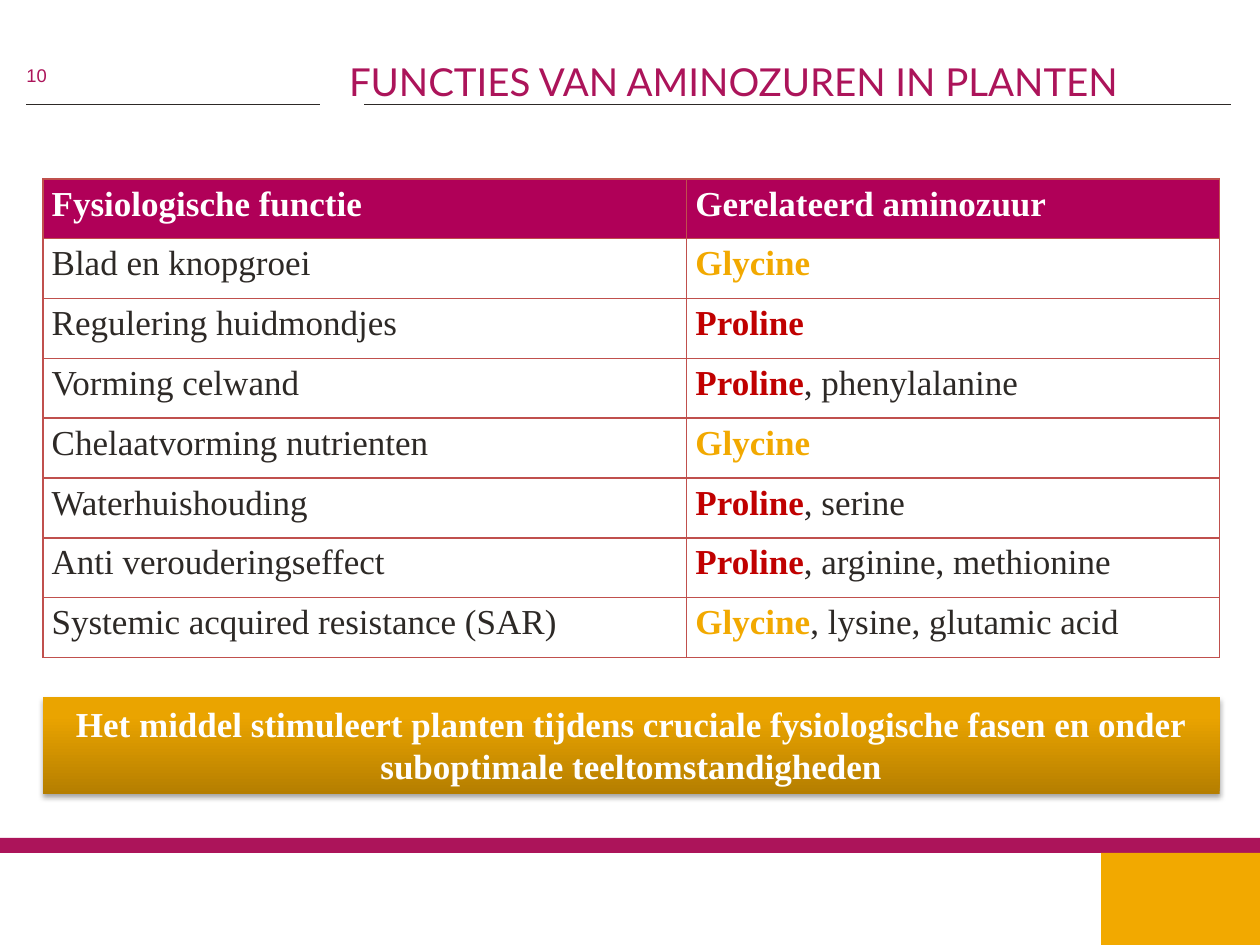
from dataclasses import dataclass

from lxml.etree import SubElement
from pptx import Presentation
from pptx.dml.color import RGBColor
from pptx.enum.shapes import MSO_CONNECTOR, MSO_SHAPE
from pptx.enum.text import MSO_ANCHOR, PP_ALIGN
from pptx.oxml import parse_xml
from pptx.oxml.ns import nsdecls, qn
from pptx.util import Inches, Pt


@dataclass(frozen=True)
class Theme:
    ink: str = "2D2926"
    magenta: str = "AC145A"
    header: str = "B00058"
    amber: str = "F2A900"
    red: str = "C00000"
    white: str = "FFFFFF"
    border: str = "C0504D"
    gradient: tuple = ((0, "B57E00"), (80, "EAA400"), (100, "ECA500"))
    title_font: str = "Lato"
    number_font: str = "Arial"
    body_font: str = "Times New Roman"
    title_size: float = 22
    number_size: float = 10.5
    body_size: float = 20


THEME = Theme()
ACCENTS = {"Glycine": THEME.amber, "Proline": THEME.red}
HEADINGS = ("Fysiologische functie", "Gerelateerd aminozuur")
FUNCTIONS = (
    ("Blad en knopgroei", "Glycine", ""),
    ("Regulering huidmondjes", "Proline", ""),
    ("Vorming celwand", "Proline", ", phenylalanine"),
    ("Chelaatvorming nutrienten", "Glycine", ""),
    ("Waterhuishouding", "Proline", ", serine"),
    ("Anti verouderingseffect", "Proline", ", arginine, methionine"),
    ("Systemic acquired resistance (SAR)", "Glycine", ", lysine, glutamic acid"),
)


def add_text(paragraph, text, font=THEME.body_font, size=THEME.body_size,
             color=THEME.ink, bold=False):
    run = paragraph.add_run()
    run.text = text
    run.font.name = font
    run.font.size = Pt(size)
    run.font.bold = bold
    run.font.color.rgb = RGBColor.from_string(color)


def set_margins(frame, horizontal, vertical):
    frame.margin_left = frame.margin_right = Inches(horizontal)
    frame.margin_top = frame.margin_bottom = Inches(vertical)


def add_rectangle(slide, left, top, width, height, color):
    shape = slide.shapes.add_shape(MSO_SHAPE.RECTANGLE, left, top, width, height)
    shape.shadow.inherit = False
    shape.fill.solid()
    shape.fill.fore_color.rgb = RGBColor.from_string(color)
    shape.line.fill.background()
    return shape


def add_rule(slide, left, right, top):
    rule = slide.shapes.add_connector(MSO_CONNECTOR.STRAIGHT, left, top, right, top)
    rule.line.color.rgb = RGBColor.from_string(THEME.ink)
    rule.line.width = Pt(0.5)
    SubElement(rule._element.spPr, qn("a:effectLst"))


def add_heading(slide, left, top, width, height):
    """Place the title, the page number and the rules under them."""
    bottom = top + height
    title_left = left + Inches(2.56)
    add_rule(slide, left, left + Inches(2.33), bottom)
    add_rule(slide, left + Inches(2.68), left + width, bottom)

    number = slide.shapes.add_textbox(left, bottom - Inches(0.32),
                                      Inches(0.57), Inches(0.18))
    set_margins(number.text_frame, 0, 0)
    number.text_frame.word_wrap = True
    add_text(number.text_frame.paragraphs[0], "10", font=THEME.number_font,
             size=THEME.number_size, color=THEME.magenta)

    title = slide.shapes.title
    title.left, title.top = title_left, top
    title.width, title.height = left + width - title_left, height
    frame = title.text_frame
    set_margins(frame, 0, 0)
    frame.vertical_anchor = MSO_ANCHOR.BOTTOM
    paragraph = frame.paragraphs[0]
    paragraph.alignment = PP_ALIGN.LEFT
    paragraph.line_spacing = Pt(24)
    add_text(paragraph, "FUNCTIES VAN AMINOZUREN IN PLANTEN", font=THEME.title_font,
             size=THEME.title_size, color=THEME.magenta)


def set_borders(cell):
    properties = cell._tc.get_or_add_tcPr()
    for index, side in enumerate(("lnL", "lnR", "lnT", "lnB")):
        properties.insert(index, parse_xml(
            f'<a:{side} {nsdecls("a")} w="{Pt(1)}"><a:solidFill>'
            f'<a:srgbClr val="{THEME.border}"/></a:solidFill></a:{side}>'))


def format_cell(cell, fill=None):
    """Format a table cell and return its paragraph."""
    set_margins(cell, 0.07, 0)
    cell.vertical_anchor = MSO_ANCHOR.TOP
    if fill:
        cell.fill.solid()
        cell.fill.fore_color.rgb = RGBColor.from_string(fill)
    else:
        cell.fill.background()
    set_borders(cell)
    paragraph = cell.text_frame.paragraphs[0]
    paragraph.line_spacing = 1.15
    return paragraph


def add_function_table(slide, left, top, width, height):
    row_count = len(FUNCTIONS) + 1
    table = slide.shapes.add_table(row_count, 2, left, top, width, height).table
    table.horz_banding = False
    table.columns[0].width = Inches(5.11)
    table.columns[1].width = width - Inches(5.11)
    for row in table.rows:
        row.height = height // row_count

    for column, heading in enumerate(HEADINGS):
        paragraph = format_cell(table.cell(0, column), THEME.header)
        add_text(paragraph, heading, color=THEME.white, bold=True)
    for row, (function, main_acid, other_acids) in enumerate(FUNCTIONS, start=1):
        add_text(format_cell(table.cell(row, 0)), function)
        paragraph = format_cell(table.cell(row, 1))
        add_text(paragraph, main_acid, color=ACCENTS[main_acid], bold=True)
        if other_acids:
            add_text(paragraph, other_acids)


def add_message(slide, left, top, width, height):
    """Place the gradient banner with its soft shadow."""
    banner = add_rectangle(slide, left, top, width, height, THEME.amber)
    properties = banner._element.spPr
    stops = "".join(f'<a:gs pos="{position * 1000}"><a:srgbClr val="{color}"/></a:gs>'
                    for position, color in THEME.gradient)
    properties.replace(properties.find(qn("a:solidFill")), parse_xml(
        f'<a:gradFill {nsdecls("a")} rotWithShape="1"><a:gsLst>{stops}</a:gsLst>'
        '<a:lin ang="16200000" scaled="0"/></a:gradFill>'))
    properties.find(qn("a:effectLst")).append(parse_xml(
        f'<a:outerShdw {nsdecls("a")} blurRad="{Pt(3.1)}" dist="{Pt(1.8)}" '
        'dir="5400000" rotWithShape="0"><a:srgbClr val="000000">'
        '<a:alpha val="35000"/></a:srgbClr></a:outerShdw>'))

    frame = banner.text_frame
    frame.word_wrap = True
    set_margins(frame, 0.1, 0.05)
    frame.vertical_anchor = MSO_ANCHOR.TOP
    paragraph = frame.paragraphs[0]
    paragraph.alignment = PP_ALIGN.CENTER
    add_text(paragraph, "Het middel stimuleert planten tijdens cruciale fysiologische "
             "fasen en onder suboptimale teeltomstandigheden",
             color=THEME.white, bold=True)


def add_footer(slide, left, top, width, height):
    band, block = Inches(0.12), Inches(1.26)
    add_rectangle(slide, left, top, width, band, THEME.magenta)
    add_rectangle(slide, left + width - block, top + band, block, height - band,
                  THEME.amber)


def main():
    presentation = Presentation()
    presentation.slide_width, presentation.slide_height = Inches(10), Inches(7.5)
    slide = presentation.slides.add_slide(presentation.slide_layouts[5])
    add_heading(slide, Inches(0.21), Inches(0), Inches(9.56), Inches(0.83))
    add_footer(slide, Inches(0), Inches(6.65), Inches(10), Inches(0.85))
    add_function_table(slide, Inches(0.34), Inches(1.42), Inches(9.34), Inches(3.8))
    add_message(slide, Inches(0.34), Inches(5.53), Inches(9.34), Inches(0.77))
    presentation.save("out.pptx")


if __name__ == "__main__":
    main()
